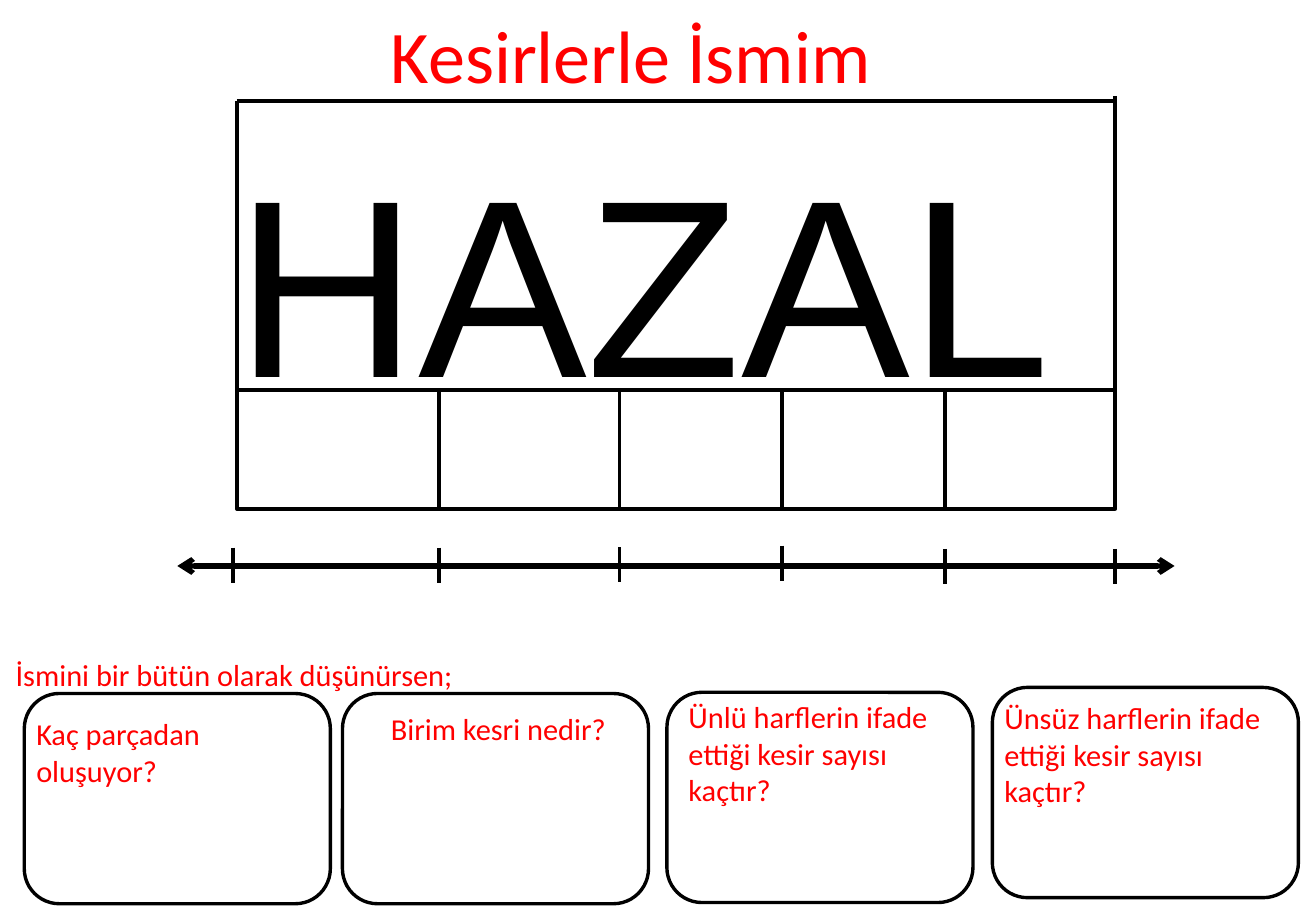
from dataclasses import dataclass

from lxml import etree
from pptx import Presentation
from pptx.dml.color import RGBColor
from pptx.enum import shapes, text
from pptx.oxml import ns
from pptx.util import Pt


@dataclass(frozen=True)
class Theme:
    ink: RGBColor = RGBColor(0, 0, 0)
    paper: RGBColor = RGBColor(255, 255, 255)
    accent: RGBColor = RGBColor(255, 0, 0)
    body_font: str = "Calibri"
    name_font: str = "Arial"
    title_size: float = 44
    body_size: float = 18
    name_size: float = 150
    line: float = 2.25
    axis_line: float = 3
    card_line: float = 2


THEME = Theme()

BAR_LEFT, BAR_TOP, BAR_RIGHT, BAR_HEIGHT = 140.4, 231, 661, 70.6
FRAME_TOP = 59.8
DIVIDERS = (260, 367.2, 463.7, 560.2)
AXIS_Y = 335.5
TICK_HEIGHT = 20.6
# x and top of each mark on the number line
TICKS = ((138.2, 324.7), (260, 324.7), (367.2, 324.3),
         (463.7, 323.5), (560.2, 325.4), (661, 325.4))
CARD_WIDTH, CARD_HEIGHT = 181.4, 124.6
# card left and top, question left and top, question height, question
CARDS = (
    (14.4, 411.1, 14.4, 420.5, 28.8, "Kaç parçadan oluşuyor?"),
    (203, 411.1, 224.6, 417.6, 28.8, "Birim kesri nedir?"),
    (395.3, 410.4, 401, 410.4, 51.1,
     "Ünlü harflerin ifade ettiği kesir sayısı kaçtır?"),
    (588.2, 407.5, 588.2, 411.1, 51.1,
     "Ünsüz harflerin ifade ettiği kesir sayısı kaçtır?"),
)


def set_attrs(target, values):
    for name, value in values.items():
        setattr(target, name, value)


def add_box(s, kind, left, top, width, height, line):
    sp = s.shapes.add_shape(kind, Pt(left), Pt(top), Pt(width), Pt(height))
    sp.shadow.inherit = False
    sp.fill.solid()
    sp.fill.fore_color.rgb = THEME.paper
    sp.line.color.rgb = THEME.ink
    sp.line.width = Pt(line)


def add_line(s, x1, y1, x2, y2, width=THEME.line, arrows=False):
    """Draw a straight line, with open arrowheads at both ends if asked."""
    sp = s.shapes.add_connector(
        shapes.MSO_CONNECTOR.STRAIGHT, Pt(x1), Pt(y1), Pt(x2), Pt(y2))
    sp.line.color.rgb = THEME.ink
    sp.line.width = Pt(width)
    if arrows:
        ln = sp.line.color and sp._element.spPr.find(ns.qn("a:ln"))
        for end in ("a:headEnd", "a:tailEnd"):
            etree.SubElement(ln, ns.qn(end), type="arrow")
    etree.SubElement(sp._element.spPr, ns.qn("a:effectLst"))


def add_text(s, left, top, width, height, words, size=THEME.body_size,
             font=THEME.body_font, color=THEME.accent, insets=None):
    sp = s.shapes.add_textbox(Pt(left), Pt(top), Pt(width), Pt(height))
    tf = sp.text_frame
    set_attrs(tf, {"word_wrap": True,
                   "auto_size": text.MSO_AUTO_SIZE.SHAPE_TO_FIT_TEXT,
                   **(insets or {})})
    r = tf.paragraphs[0].add_run()
    r.text = words
    set_attrs(r.font, {"name": font, "size": Pt(size)})
    r.font.color.rgb = color


def add_name_frame(s):
    """Draw the name above a bar divided under its letters."""
    add_box(s, shapes.MSO_SHAPE.RECTANGLE, BAR_LEFT, BAR_TOP,
            BAR_RIGHT - BAR_LEFT, BAR_HEIGHT, THEME.line)
    for x in DIVIDERS:
        add_line(s, x, BAR_TOP, x, BAR_TOP + BAR_HEIGHT)
    add_line(s, BAR_LEFT, FRAME_TOP, BAR_LEFT, BAR_TOP)
    add_line(s, BAR_RIGHT, FRAME_TOP - 2.9, BAR_RIGHT, BAR_TOP)
    add_line(s, BAR_LEFT, FRAME_TOP, BAR_RIGHT, FRAME_TOP)
    add_text(s, 132.5, 56.9, 663, 189.4, "HAZAL", THEME.name_size,
             THEME.name_font, THEME.ink,
             {"margin_top": Pt(17), "margin_bottom": Pt(0)})


def add_number_line(s):
    add_line(s, 105.1, AXIS_Y, 696.2, AXIS_Y, THEME.axis_line, arrows=True)
    for x, top in TICKS:
        add_line(s, x, top, x, top + TICK_HEIGHT)


def add_card(s, left, top, text_left, text_top, text_height, question):
    add_box(s, shapes.MSO_SHAPE.ROUNDED_RECTANGLE, left, top,
            CARD_WIDTH, CARD_HEIGHT, THEME.card_line)
    add_text(s, text_left, text_top, CARD_WIDTH, text_height, question)


def main():
    prs = Presentation()
    set_attrs(prs, {"slide_width": Pt(780), "slide_height": Pt(540)})
    s = prs.slides.add_slide(prs.slide_layouts[6])
    add_text(s, 224.6, 2.2, 447, 60.5, "Kesirlerle İsmim", THEME.title_size)
    add_name_frame(s)
    add_number_line(s)
    for card in CARDS:
        add_card(s, *card)
    add_text(s, 2.2, 385.2, 292.3, 28.8, "İsmini bir bütün olarak düşünürsen;")
    prs.save("out.pptx")


if __name__ == "__main__":
    main()
